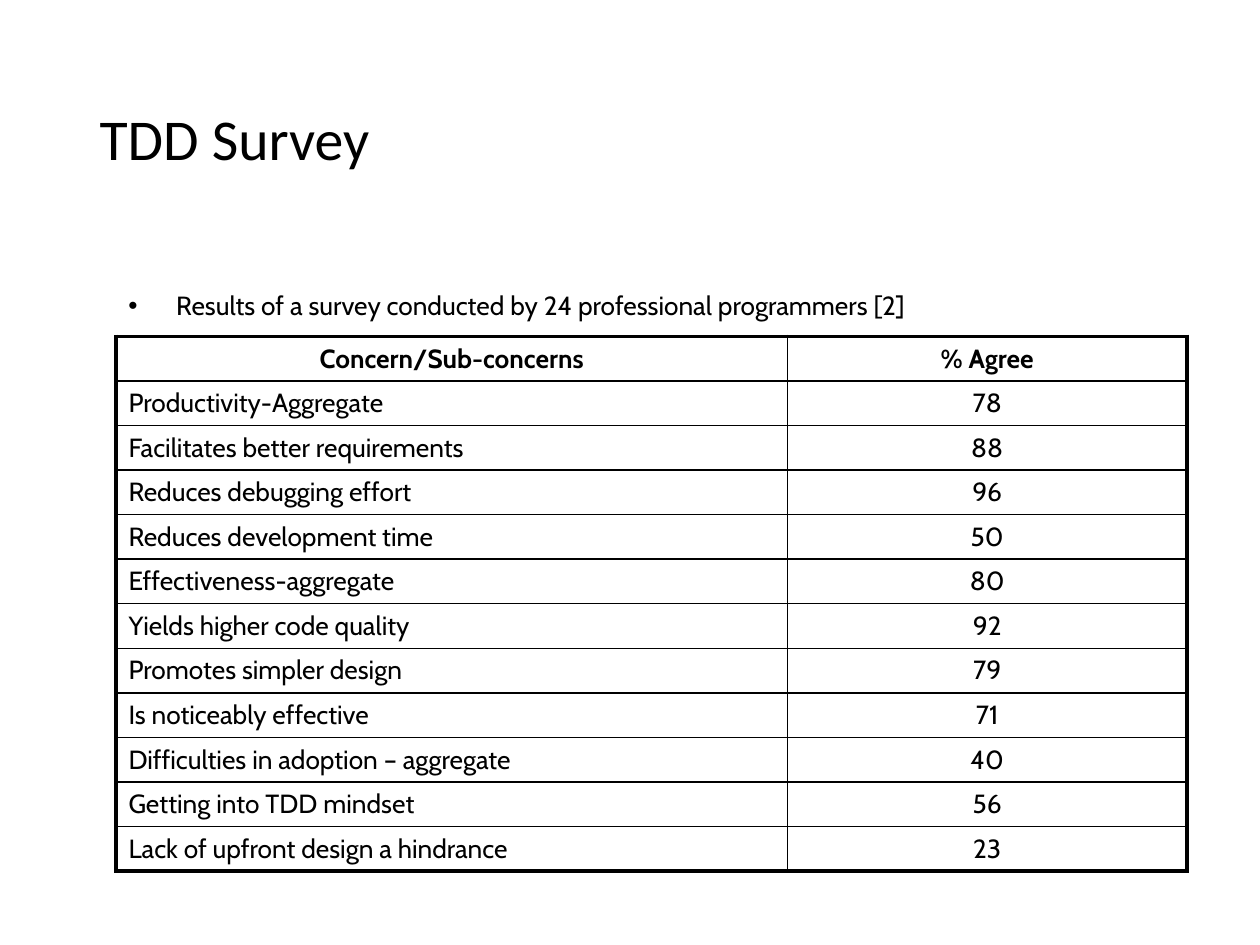
from dataclasses import dataclass

from lxml.etree import SubElement
from pptx import Presentation
from pptx.dml.color import RGBColor
from pptx.enum.text import MSO_ANCHOR, MSO_AUTO_SIZE, PP_ALIGN
from pptx.oxml.ns import qn
from pptx.util import Inches, Pt


@dataclass(frozen=True)
class Theme:
    """Colours, fonts, type sizes and line widths."""
    ink: str = "000000"
    title_font: str = "Calibri"
    body_font: str = "Cabin"
    title_size: float = 33
    body_size: float = 15
    outer: float = 2.25
    inner: float = 1


class Deck:
    """Holds the theme and the current slide."""

    def __init__(self, prs, theme):
        """Start a title-only slide."""
        self.theme = theme
        self.s = prs.slides.add_slide(prs.slide_layouts[5])

    def add_text(self, tf, text, para=None, **font):
        """Put one formatted run in the first paragraph."""
        t = self.theme
        p = tf.paragraphs[0]
        for name, value in (para or {}).items():
            setattr(p, name, value)
        r = p.add_run()
        r.text = text
        style = {"name": t.body_font, "size": Pt(t.body_size), "bold": False, **font}
        for name, value in style.items():
            setattr(r.font, name, value)
        r.font.color.rgb = RGBColor.from_string(t.ink)
        return p

    def title(self, text, *box):
        """Place and fill the title placeholder."""
        sp = self.s.shapes.title
        sp.left, sp.top, sp.width, sp.height = map(Inches, box)
        tf = sp.text_frame
        tf.vertical_anchor = MSO_ANCHOR.MIDDLE
        self.add_text(tf, text, {"alignment": PP_ALIGN.LEFT, "line_spacing": 0.9},
                      name=self.theme.title_font, size=Pt(self.theme.title_size))

    def bullet(self, text, *box, indent=0.38):
        """Add a one-line bulleted text box."""
        tf = self.s.shapes.add_textbox(*map(Inches, box)).text_frame
        tf.word_wrap = False
        tf.auto_size = MSO_AUTO_SIZE.SHAPE_TO_FIT_TEXT
        pPr = self.add_text(tf, text, {"alignment": PP_ALIGN.LEFT})._p.get_or_add_pPr()
        pPr.set("marL", str(Inches(indent)))
        pPr.set("indent", str(-Inches(indent)))
        SubElement(pPr, qn("a:buFont"), typeface="Arial")
        SubElement(pPr, qn("a:buChar"), char="•")

    def border(self, cell, side, width):
        """Draw one side of a cell."""
        ln = SubElement(cell._tc.get_or_add_tcPr(), qn(f"a:ln{side}"), w=str(Pt(width)))
        fill = SubElement(ln, qn("a:solidFill"))
        SubElement(fill, qn("a:srgbClr"), val=self.theme.ink)

    def table(self, rows, left, top, widths, row_height):
        """Add a ruled table with a heavy frame and a bold header."""
        t = self.theme
        n, m = len(rows), len(widths)
        tbl = self.s.shapes.add_table(n, m, Inches(left), Inches(top), Inches(sum(widths)),
                                      Inches(row_height * n)).table
        tbl.first_row = tbl.horz_banding = False
        for col, width in zip(tbl.columns, widths):
            col.width = Inches(width)
        for i, row in enumerate(rows):
            for j, text in enumerate(row):
                cell = tbl.cell(i, j)
                edges = {"L": j == 0, "R": j == m - 1, "T": i == 0, "B": i == n - 1}
                for side, is_outer in edges.items():
                    self.border(cell, side, t.outer if is_outer else t.inner)
                cell.fill.background()
                align = PP_ALIGN.CENTER if i == 0 or j > 0 else PP_ALIGN.LEFT
                self.add_text(cell.text_frame, str(text), {"alignment": align}, bold=i == 0)


SURVEY = [
    ("Concern/Sub-concerns", "% Agree"),
    ("Productivity-Aggregate", 78),
    ("Facilitates better requirements", 88),
    ("Reduces debugging effort", 96),
    ("Reduces development time", 50),
    ("Effectiveness-aggregate", 80),
    ("Yields higher code quality", 92),
    ("Promotes simpler design", 79),
    ("Is noticeably effective", 71),
    ("Difficulties in adoption – aggregate", 40),
    ("Getting into TDD mindset", 56),
    ("Lack of upfront design a hindrance", 23),
]


def main():
    """Build and save the survey slide."""
    prs = Presentation()
    prs.slide_width, prs.slide_height = Inches(10), Inches(7.5)
    deck = Deck(prs, Theme())
    deck.title("TDD Survey", 0.69, 0.4, 8.62, 1.45)
    deck.table(SURVEY, 0.92, 2.67, (5.33, 3.17), 0.35)
    deck.bullet("Results of a survey conducted by 24 professional programmers [2]",
                0.92, 2.25, 6.71, 0.35)
    prs.save("out.pptx")


if __name__ == "__main__":
    main()
